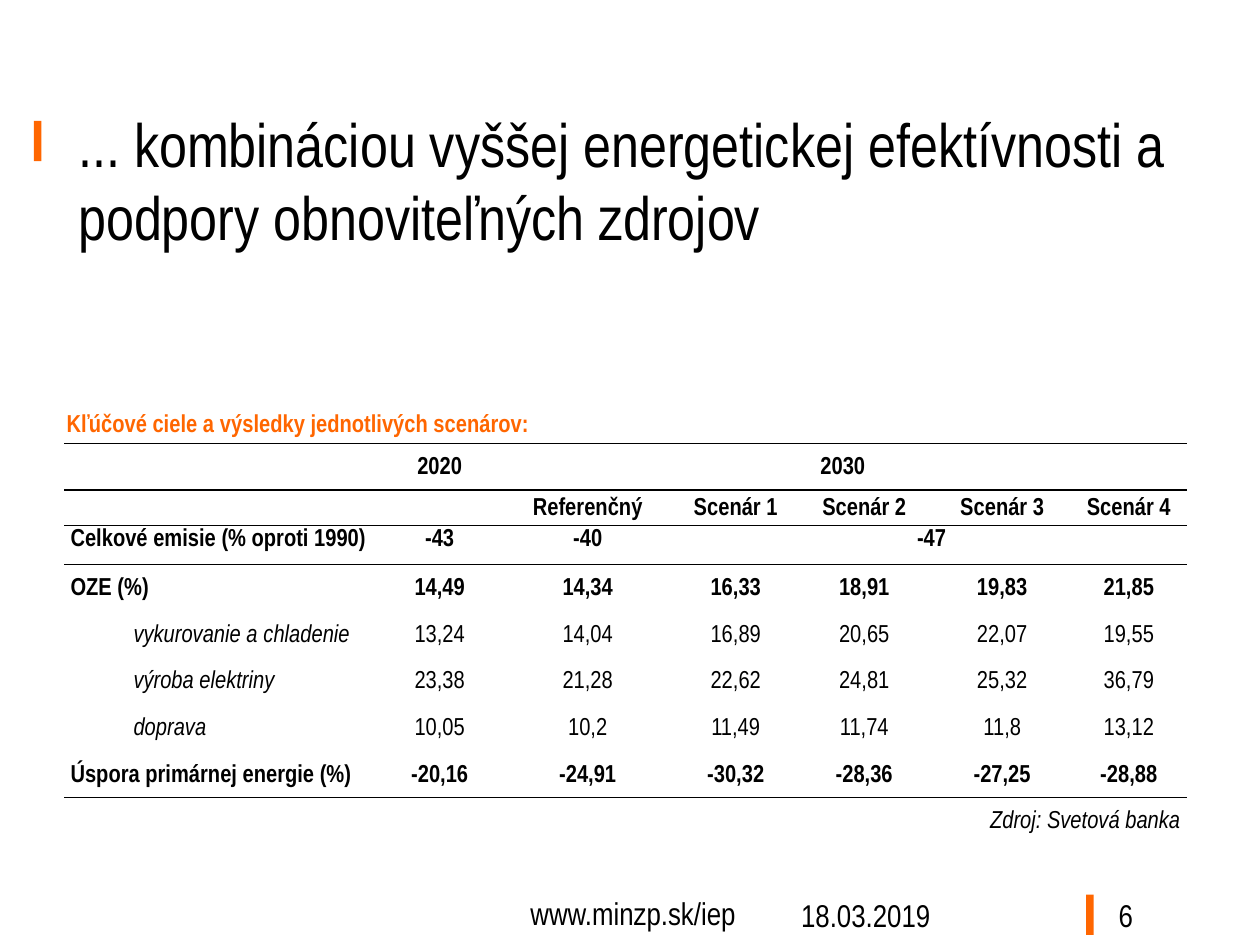
from lxml import etree
from pptx import Presentation, util as u
from pptx.dml.color import RGBColor
from pptx.enum import shapes, text
from pptx.oxml import ns

ORANGE, BLACK, WHITE = "FF6600", "000000", "FFFFFF"
align = text.PP_ALIGN


def color(value):
    return RGBColor.from_string(value)


def style(paragraph, size, value=BLACK, bold=False, italic=False, alignment=align.LEFT):
    paragraph.alignment = alignment
    font = paragraph.font
    font.name, font.size = "Arial Narrow", u.Pt(size)
    font.bold, font.italic = bold, italic
    font.color.rgb = color(value)


presentation = Presentation()
presentation.slide_width, presentation.slide_height = u.Inches(10), u.Inches(7.5)
slide = presentation.slides.add_slide(presentation.slide_layouts[5])

for left, top in [(8.62, 7.1), (0.27, 0.96)]:
    bar = slide.shapes.add_shape(
        shapes.MSO_SHAPE.RECTANGLE, u.Inches(left), u.Inches(top), u.Inches(0.06), u.Inches(0.32))
    bar.shadow.inherit = False
    bar.fill.solid()
    bar.fill.fore_color.rgb = color(ORANGE)
    bar.line.fill.background()

title = slide.shapes.title
title.left, title.top, title.width, title.height = [u.Inches(n) for n in (0.52, 1.07, 9, 0.71)]
title.text_frame.text = "... kombináciou vyššej energetickej efektívnosti a podpory obnoviteľných zdrojov"
title.text_frame.auto_size = text.MSO_AUTO_SIZE.NONE
title.text_frame.vertical_anchor = text.MSO_ANCHOR.MIDDLE
style(title.text_frame.paragraphs[0], 35)

labels = [
    ("18.03.2019", (6.26, 7.06, 2.33, 0.39), 18, BLACK, False, align.LEFT),
    ("www.minzp.sk/iep", (3.44, 7.05, 3.17, 0.37), 18, BLACK, False, align.CENTER),
    ("6", (8.78, 7.06, 0.6, 0.44), 18, BLACK, False, align.LEFT),
    ("Kľúčové ciele a\u00a0výsledky jednotlivých scenárov:", (0.43, 3.19, 8.95, 0.34),
     14, ORANGE, True, align.LEFT),
]
for words, place, size, value, bold, alignment in labels:
    box = slide.shapes.add_textbox(*[u.Inches(n) for n in place])
    box.text_frame.word_wrap = True
    box.text_frame.text = words
    style(box.text_frame.paragraphs[0], size, value, bold, alignment=alignment)

rows = [
    ["", "2020", "2030", "", "", "", ""],
    ["", "", "Referenčný", "Scenár 1", "Scenár 2", "Scenár 3", "Scenár 4"],
    ["Celkové emisie (% oproti 1990)", "-43", "-40", "-47", "", "", ""],
    ["OZE (%)", "14,49", "14,34", "16,33", "18,91", "19,83", "21,85"],
    ["vykurovanie a\u00a0chladenie", "13,24", "14,04", "16,89", "20,65", "22,07", "19,55"],
    ["výroba elektriny", "23,38", "21,28", "22,62", "24,81", "25,32", "36,79"],
    ["doprava", "10,05", "10,2", "11,49", "11,74", "11,8", "13,12"],
    ["Úspora primárnej energie (%)", "-20,16", "-24,91", "-30,32", "-28,36", "-27,25", "-28,88"],
    ["", "", "", "Zdroj: Svetová banka", "", "", ""],
]
widths = [2.51, 0.94, 1.41, 0.94, 1.1, 1.09, 0.92]
heights = [0.37, 0.28, 0.31] + [0.37] * 6
sector_rows, source_row, emission_row = (4, 5, 6), 8, 2
ruled_tops, ruled_bottoms = (0, 1, 2, 8), (0, 1, 7)

frame = slide.shapes.add_table(
    len(rows), len(widths), u.Inches(0.51), u.Inches(3.52), u.Inches(8.91), u.Inches(3.22))
table = frame.table
table.first_row = table.horz_banding = False
style_id = frame._element.find(".//" + ns.qn("a:tableStyleId"))
style_id.text = "{2D5ABB26-0587-4C30-8999-92F81FD0307C}"
for column, width in zip(table.columns, widths):
    column.width = u.Inches(width)
for row, height in zip(table.rows, heights):
    row.height = u.Inches(height)
for row, first in [(0, 2), (2, 3), (8, 3)]:
    table.cell(row, first).merge(table.cell(row, 6))

for r, values in enumerate(rows):
    for c, value in enumerate(values):
        cell = table.cell(r, c)
        cell.margin_left = cell.margin_right = u.Inches(0.05)
        cell.margin_top = cell.margin_bottom = 0
        cell.vertical_anchor = text.MSO_ANCHOR.TOP if r == emission_row else text.MSO_ANCHOR.MIDDLE
        cell.text = value
        paragraph = cell.text_frame.paragraphs[0]
        paragraph.line_spacing = 1.15
        sector = r in sector_rows and c == 0
        if sector:
            paragraph.level = 1
            properties = paragraph._p.get_or_add_pPr()
            properties.set("marL", str(u.Inches(0.5)))
            properties.set("indent", "0")
        alignment = align.RIGHT if r == source_row else align.JUSTIFY if c == 0 else align.CENTER
        style(paragraph, 14 if value else 10, bold=r not in (*sector_rows, source_row),
              italic=sector or r == source_row, alignment=alignment)
        cell_properties = cell._tc.get_or_add_tcPr()
        for tag, ruled in [("a:lnT", ruled_tops), ("a:lnB", ruled_bottoms)]:
            if r in ruled:
                line = etree.SubElement(cell_properties, ns.qn(tag), w=str(u.Pt(1)))
                fill = etree.SubElement(line, ns.qn("a:solidFill"))
                etree.SubElement(fill, ns.qn("a:srgbClr"), val=BLACK)
        cell.fill.background()

presentation.save("out.pptx")
